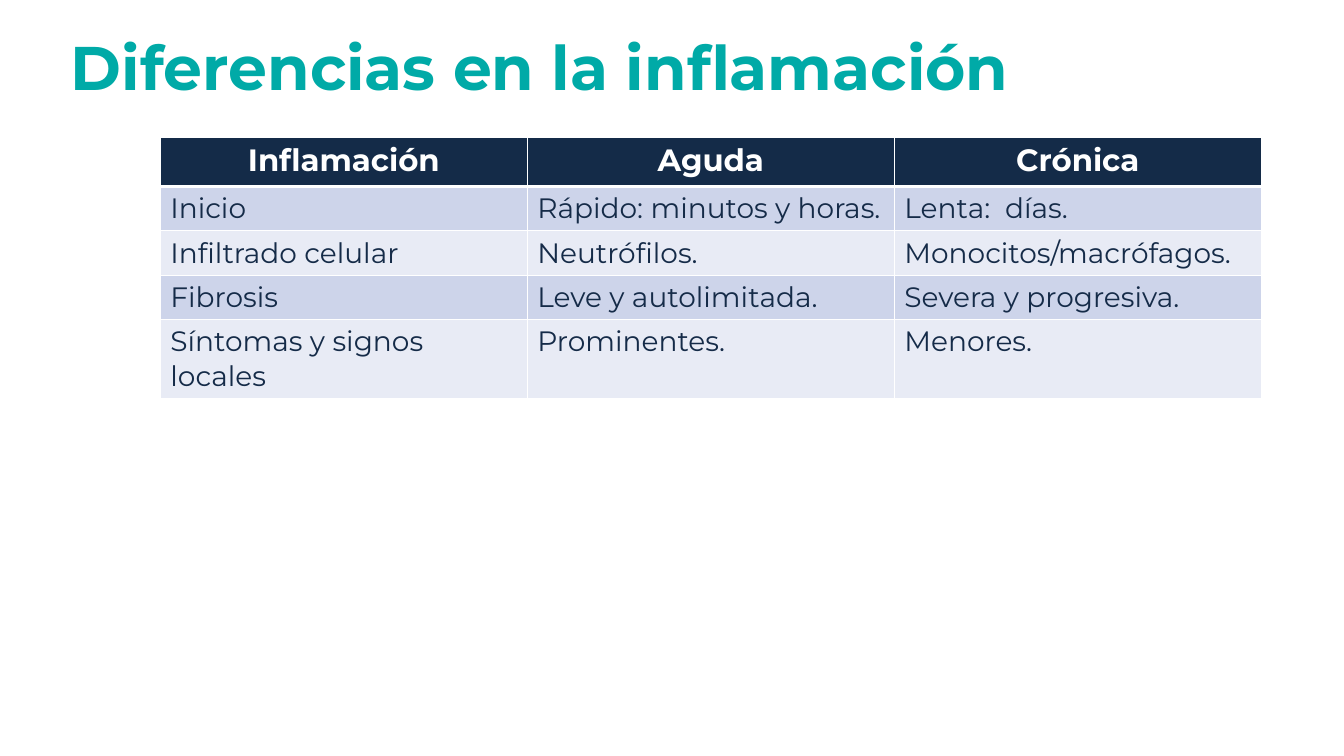
from dataclasses import dataclass
from lxml.etree import SubElement
from pptx import Presentation
from pptx.dml.color import RGBColor
from pptx.enum.text import MSO_ANCHOR, PP_ALIGN
from pptx.oxml.ns import qn
from pptx.util import Inches, Pt


@dataclass(frozen=True)
class Theme:
    font: str = "Montserrat"
    teal: str = "00AAA7"
    navy: str = "142B48"
    ink: str = "152B48"
    white: str = "FFFFFF"
    bands: tuple = ("CDD4EA", "E8EBF5")
    title: int = 44
    head: int = 22
    body: int = 20


THEME = Theme()
ROWS = [
    ("Inflamación", "Aguda", "Crónica"),
    ("Inicio", "Rápido: minutos y horas.", "Lenta:  días."),
    ("Infiltrado celular", "Neutrófilos.", "Monocitos/macrófagos."),
    ("Fibrosis", "Leve y autolimitada.", "Severa y progresiva."),
    ("Síntomas y signos locales", "Prominentes.", "Menores."),
]


def set_text(frame, text, size, color, bold, align):
    frame.text = text
    para = frame.paragraphs[0]
    para.alignment = align
    font = para.runs[0].font
    font.name = THEME.font
    font.size = Pt(size)
    font.bold = bold
    font.color.rgb = RGBColor.from_string(color)


def add_title(slide, text):
    title = slide.shapes.title
    title.left, title.top = Inches(0.6), Inches(0.19)
    title.width, title.height = Inches(12.42), Inches(1.17)
    frame = title.text_frame
    frame.word_wrap = True
    frame.vertical_anchor = MSO_ANCHOR.TOP
    frame.margin_left = frame.margin_right = Inches(0.1)
    frame.margin_top = frame.margin_bottom = Inches(0.1)
    set_text(frame, text, THEME.title, THEME.teal, True, PP_ALIGN.LEFT)


def add_edges(cell, top, bottom):
    props = cell._tc.get_or_add_tcPr()
    widths = {"lnL": 1, "lnR": 1, "lnT": top, "lnB": bottom}
    for place, (side, width) in enumerate(widths.items()):
        line = props.makeelement(qn(f"a:{side}"), {"w": str(Pt(width))})
        fill = SubElement(line, qn("a:solidFill"))
        SubElement(fill, qn("a:srgbClr"), val=THEME.white)
        props.insert(place, line)


def style_cell(cell, text, row):
    head = row == 0
    cell.margin_left = cell.margin_right = Inches(0.1)
    cell.margin_top = cell.margin_bottom = Inches(0.05)
    cell.fill.solid()
    color = THEME.navy if head else THEME.bands[(row - 1) % 2]
    cell.fill.fore_color.rgb = RGBColor.from_string(color)
    if head:
        set_text(cell.text_frame, text, THEME.head, THEME.white, True, PP_ALIGN.CENTER)
    else:
        set_text(cell.text_frame, text, THEME.body, THEME.ink, False, PP_ALIGN.LEFT)
    add_edges(cell, 3 if row == 1 else 1, 3 if head else 1)


def add_grid(slide, rows):
    count = len(rows[0])
    width = Inches(3.64)
    frame = slide.shapes.add_table(
        len(rows), count, Inches(1.59), Inches(1.36), width * count, Inches(2.13)
    )
    table = frame.table
    for column in table.columns:
        column.width = width
    for row, texts in enumerate(rows):
        table.rows[row].height = Inches(0.41 if row else 0.49)
        for col, text in enumerate(texts):
            style_cell(table.cell(row, col), text, row)


def main():
    deck = Presentation()
    deck.slide_width, deck.slide_height = Inches(13.33), Inches(7.5)
    slide = deck.slides.add_slide(deck.slide_layouts[5])
    add_title(slide, "Diferencias en la inflamación")
    add_grid(slide, ROWS)
    deck.save("out.pptx")


if __name__ == "__main__":
    main()
